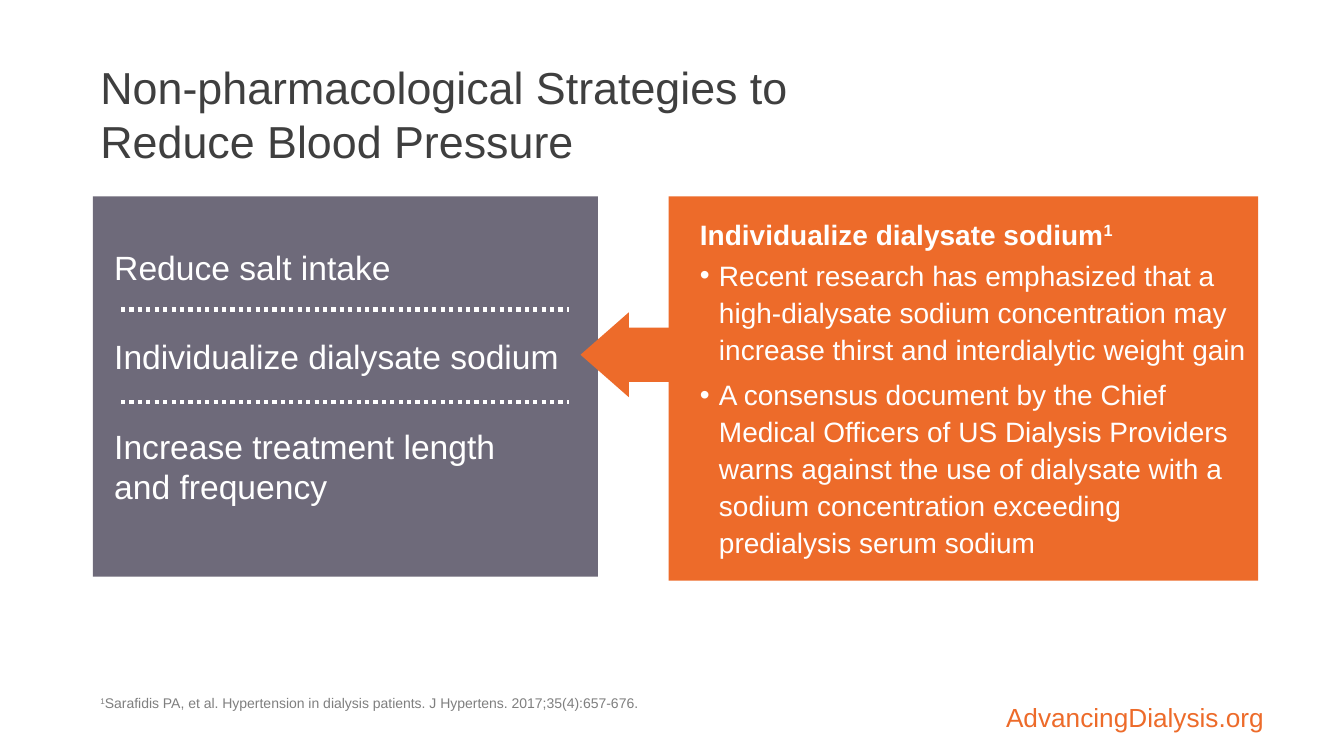
from lxml.etree import SubElement
from pptx import Presentation
from pptx.dml.color import RGBColor
from pptx.enum.dml import MSO_LINE
from pptx.enum.shapes import MSO_CONNECTOR, MSO_SHAPE
from pptx.enum.text import MSO_ANCHOR, PP_ALIGN
from pptx.oxml.ns import qn
from pptx.util import Cm, Pt

COLORS = {
    "orange": "ED6B2A",
    "plum": "312B42",
    "title": "3F3F3F",
    "note": "7F7F7F",
    "white": "FFFFFF",
}


class SlideBuilder:
    font_name = "Arial"

    def __init__(self, slide):
        self.slide = slide

    def color(self, name):
        return RGBColor.from_string(COLORS[name])

    def block(self, preset, left, top, width, height, color, opacity=100):
        shape = self.slide.shapes.add_shape(
            preset, Cm(left), Cm(top), Cm(width), Cm(height))
        shape.shadow.inherit = False
        shape.fill.solid()
        shape.fill.fore_color.rgb = self.color(color)
        shape.line.fill.background()
        if opacity < 100:
            rgb = shape._element.spPr.find(qn("a:solidFill"))[0]
            SubElement(rgb, qn("a:alpha"), val=str(opacity * 1000))
        return shape

    def dotted_line(self, left, right, y):
        line = self.slide.shapes.add_connector(
            MSO_CONNECTOR.STRAIGHT, Cm(left), Cm(y), Cm(right), Cm(y))
        line.line.color.rgb = self.color("white")
        line.line.width = Pt(3)
        line.line.dash_style = MSO_LINE.ROUND_DOT
        SubElement(line._element.spPr, qn("a:effectLst"))

    def text_box(self, left, top, width, height, anchor=MSO_ANCHOR.TOP,
                 side=0.19, edge=0.1):
        frame = self.slide.shapes.add_textbox(
            Cm(left), Cm(top), Cm(width), Cm(height)).text_frame
        frame.word_wrap = True
        frame.vertical_anchor = anchor
        frame.margin_left = frame.margin_right = Cm(side)
        frame.margin_top = frame.margin_bottom = Cm(edge)
        return frame

    def paragraph(self, frame, text, size, color, bold=False, spacing=1.0,
                  before=0, after=0, indent=0, bullet=False):
        first = frame.paragraphs[0]
        paragraph = frame.add_paragraph() if first.text else first
        paragraph.text = text
        paragraph.line_spacing = spacing
        paragraph.space_before = Pt(before)
        paragraph.space_after = Pt(after)
        properties = paragraph._p.get_or_add_pPr()
        properties.set("marL", str(Cm(indent)))
        if bullet:
            properties.set("indent", str(-Cm(indent)))
            SubElement(properties, qn("a:buFont"), typeface=self.font_name)
            SubElement(properties, qn("a:buChar"), char="•")
        paragraph.font.name = self.font_name
        paragraph.font.size = Pt(size)
        paragraph.font.bold = bold
        paragraph.font.color.rgb = self.color(color)
        return paragraph

    def superscript(self, run):
        run._r.get_or_add_rPr().set("baseline", "30000")


def main():
    deck = Presentation()
    deck.slide_width, deck.slide_height = Cm(33.87), Cm(19.05)
    builder = SlideBuilder(deck.slides.add_slide(deck.slide_layouts[6]))

    site = builder.text_box(20.62, 16.92, 11.51, 1.55, MSO_ANCHOR.BOTTOM, 0.28, 0)
    address = builder.paragraph(site, "AdvancingDialysis.org", 18.7, "orange", spacing=0.9)
    address.alignment = PP_ALIGN.RIGHT

    title = builder.text_box(2.34, 1.02, 21.5, 3.68, MSO_ANCHOR.MIDDLE)
    builder.paragraph(
        title, "Non-pharmacological Strategies to Reduce Blood Pressure", 32, "title")

    builder.block(MSO_SHAPE.RECTANGLE, 2.34, 4.95, 12.73, 9.58, "plum", 70)
    strategies = builder.text_box(2.36, 6.12, 12.65, 7.14)
    for order, strategy in enumerate((
            "Reduce salt intake",
            "Individualize dialysate sodium",
            "Increase treatment length\vand frequency")):
        builder.paragraph(strategies, strategy, 24, "white",
                          before=35 if order else 0, indent=0.33)
    for y in (7.8, 10.13):
        builder.dotted_line(3.05, 14.33, y)

    builder.block(MSO_SHAPE.RECTANGLE, 16.85, 4.95, 14.86, 9.68, "orange")
    arrow = builder.block(MSO_SHAPE.LEFT_ARROW, 14.63, 7.87, 3.96, 2.14, "orange")
    arrow.adjustments[0], arrow.adjustments[1] = 0.64, 0.57

    evidence = builder.text_box(17.45, 5.05, 14.3, 9.47, MSO_ANCHOR.MIDDLE)
    heading = builder.paragraph(
        evidence, "Individualize dialysate sodium", 20, "white", bold=True, after=3)
    reference = heading.add_run()
    reference.text = "1"
    builder.superscript(reference)
    for finding in (
            "Recent research has emphasized that a high-dialysate sodium concentration "
            "may increase thirst and interdialytic weight gain",
            "A consensus document by the Chief Medical Officers of US Dialysis Providers "
            "warns against the use of dialysate with a sodium concentration exceeding "
            "predialysis serum sodium"):
        builder.paragraph(evidence, finding, 20, "white", spacing=1.1,
                          after=6, indent=0.48, bullet=True)

    footnote = builder.text_box(2.34, 17.45, 21.11, 0.79)
    citation = builder.paragraph(footnote, "1", 10, "note", spacing=0.9)
    builder.superscript(citation.runs[0])
    citation.add_run().text = (
        "Sarafidis PA, et al. Hypertension in dialysis patients. "
        "J Hypertens. 2017;35(4):657-676.")

    deck.save("out.pptx")


if __name__ == "__main__":
    main()
